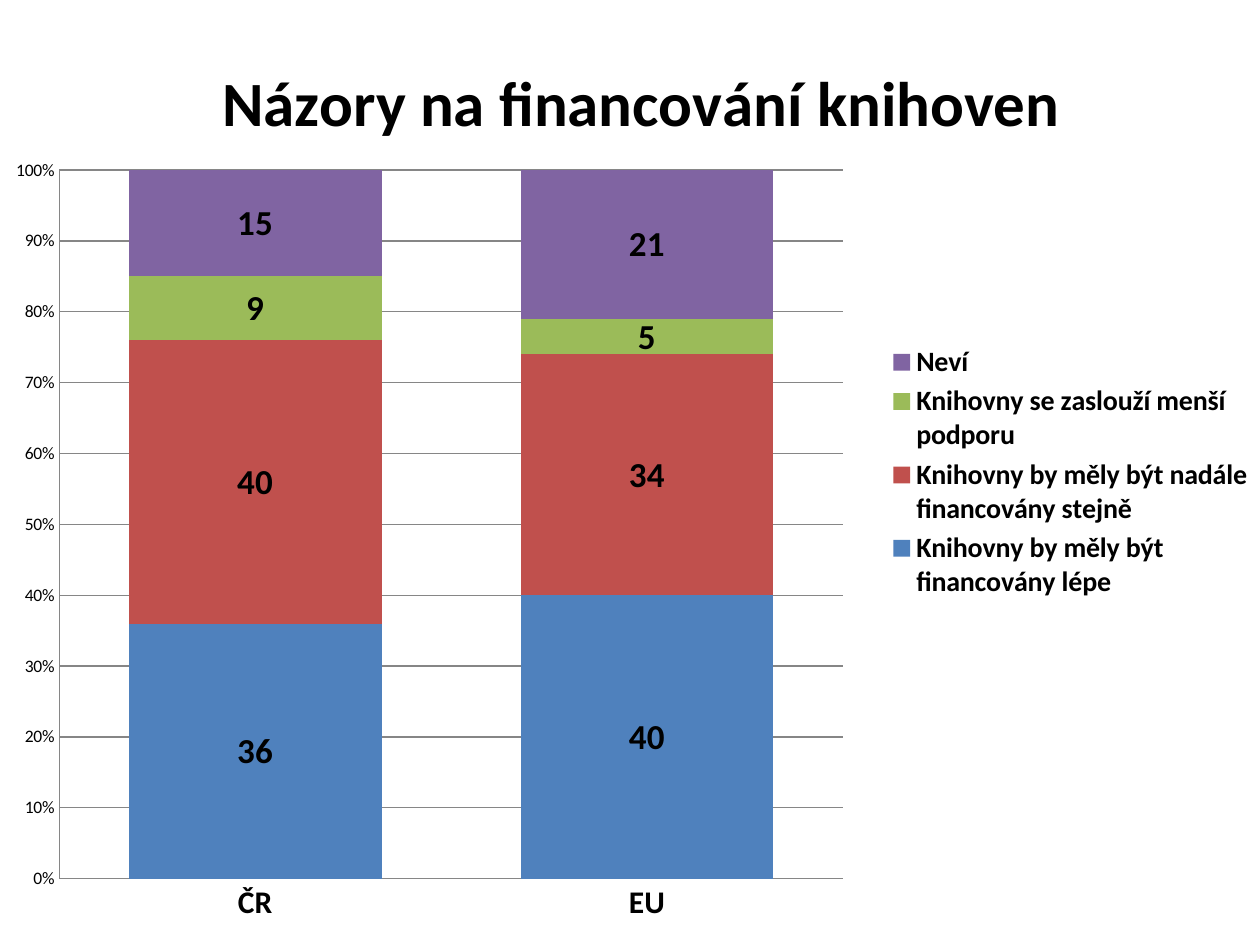
from dataclasses import dataclass

from pptx import Presentation
from pptx.chart.data import CategoryChartData
from pptx.dml.color import RGBColor
from pptx.enum.chart import (XL_CHART_TYPE, XL_LABEL_POSITION,
                             XL_LEGEND_POSITION, XL_TICK_MARK)
from pptx.oxml import parse_xml
from pptx.oxml.ns import nsdecls, qn
from pptx.util import Cm, Pt

STACKED = XL_CHART_TYPE.COLUMN_STACKED_100
CENTER = XL_LABEL_POSITION.CENTER
RIGHT = XL_LEGEND_POSITION.RIGHT
NONE, OUT = XL_TICK_MARK.NONE, XL_TICK_MARK.OUTSIDE
FONT, BLACK, GRAY = "Calibri", "000000", "868686"


@dataclass
class Series:
    name: str
    vals: tuple[int, int]
    color: str


AREAS = ("ČR", "EU")
VIEWS = [
    Series("Knihovny by měly být financovány lépe", (36, 40), "4F81BD"),
    Series("Knihovny by měly být nadále financovány stejně", (40, 34), "C0504D"),
    Series("Knihovny se zaslouží menší podporu", (9, 5), "9BBB59"),
    Series("Neví", (15, 21), "8064A2"),
]


def paint(color, code: str) -> None:
    color.rgb = RGBColor.from_string(code)


def style(font, size: float, bold: bool = True) -> None:
    font.name, font.size, font.bold = FONT, Pt(size), bold
    paint(font.color, BLACK)


def place(part, index: int, target: str = "", **spots: float) -> None:
    """Give a chart part a manual layout in fractions of the chart."""
    for old in part.findall(qn("c:layout")):
        part.remove(old)
    inner = f'<c:layoutTarget val="{target}"/>' if target else ""
    modes = "".join(f'<c:{k}Mode val="edge"/>' for k in "xy")
    sizes = "".join(f'<c:{k} val="{v}"/>' for k, v in spots.items())
    part.insert(index, parse_xml(
        f'<c:layout {nsdecls("c")}><c:manualLayout>{inner}{modes}{sizes}'
        '</c:manualLayout></c:layout>'))


def draw_bars(plot) -> None:
    plot.gap_width, plot.overlap, plot.vary_by_categories = 55, 100, False
    for bar, view in zip(plot.series, VIEWS):
        bar.format.fill.solid()
        paint(bar.format.fill.fore_color, view.color)
        tags = bar.data_labels
        tags.show_value, tags.position = True, CENTER
        style(tags.font, 20)


def draw_axes(chart) -> None:
    cat, val = chart.category_axis, chart.value_axis
    cat.major_tick_mark = val.major_tick_mark = NONE
    style(cat.tick_labels.font, 18)
    style(val.tick_labels.font, 10, False)
    val.tick_labels.number_format = "0%"
    val.tick_labels.number_format_is_linked = False
    val.has_major_gridlines = True
    for item in (cat, val, val.major_gridlines):
        item.format.line.width = Pt(0.75)
        paint(item.format.line.color, GRAY)


def main() -> None:
    deck = Presentation()
    deck.slide_width, deck.slide_height = Cm(25.4), Cm(19.05)
    slide = deck.slides.add_slide(deck.slide_layouts[6])

    # Chart data
    data = CategoryChartData()
    data.categories = AREAS
    for view in VIEWS:
        data.add_series(view.name, view.vals)
    chart = slide.shapes.add_chart(
        STACKED, Cm(-0.08), Cm(0), Cm(25.48), Cm(19.05), data).chart
    style(chart.font, 10, False)

    # Title
    chart.has_title = True
    line = chart.chart_title.text_frame.paragraphs[0]
    line.text = "Názory na financování knihoven"
    style(line.font, 36)
    chart.chart_title.include_in_layout = False
    place(chart.chart_title._element, 1, x=0.17, y=0.05)

    # Plot
    draw_bars(chart.plots[0])
    draw_axes(chart)
    place(chart.plots[0]._element.getparent(), 0, "inner",
          x=0.05, y=0.18, w=0.62, h=0.75)

    # Legend
    chart.has_legend = True
    legend = chart.legend
    legend.position, legend.include_in_layout = RIGHT, False
    style(legend.font, 16)
    place(legend._element, 1, x=0.7, y=0.36, w=0.3, h=0.28)

    deck.save("out.pptx")


if __name__ == "__main__":
    main()
